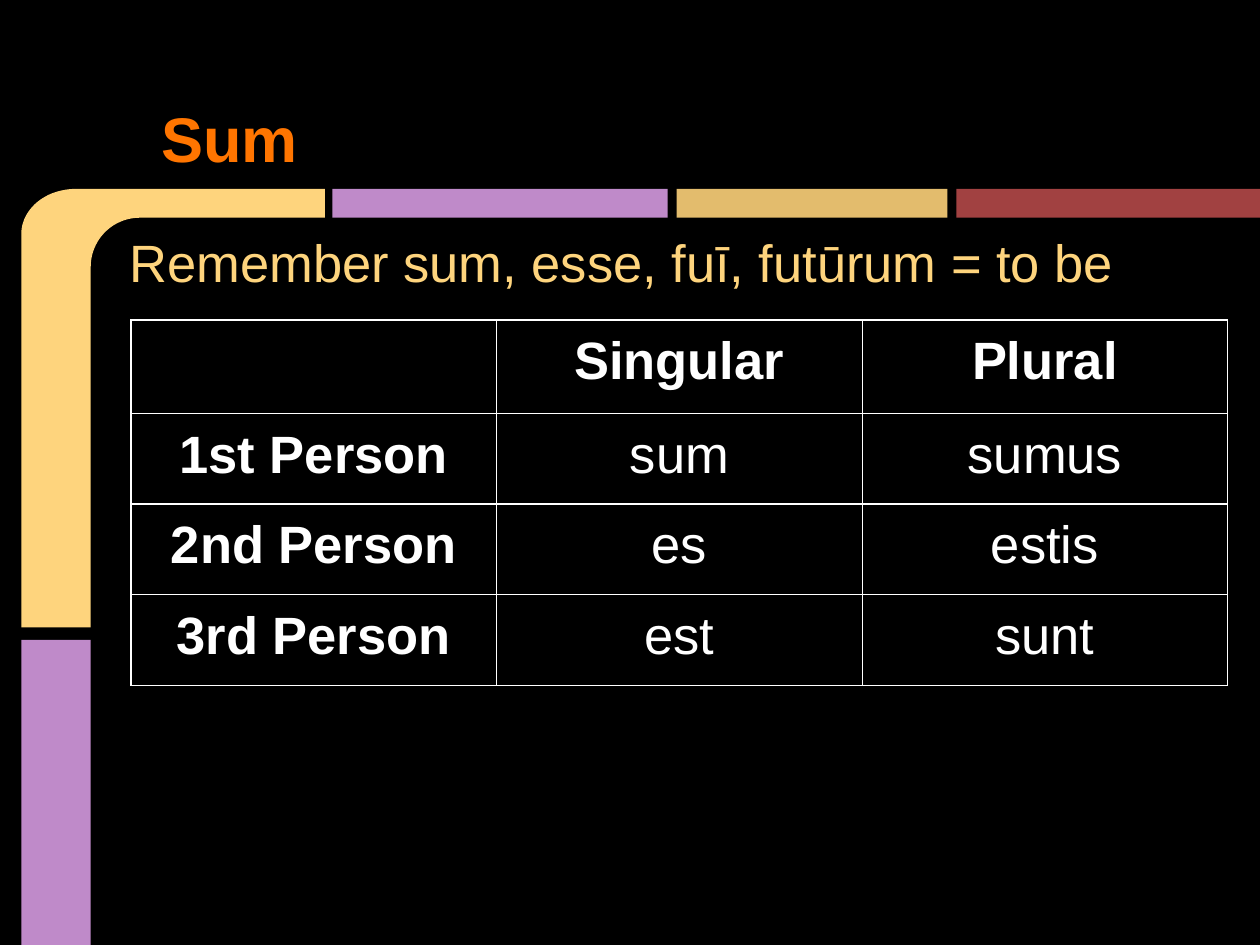
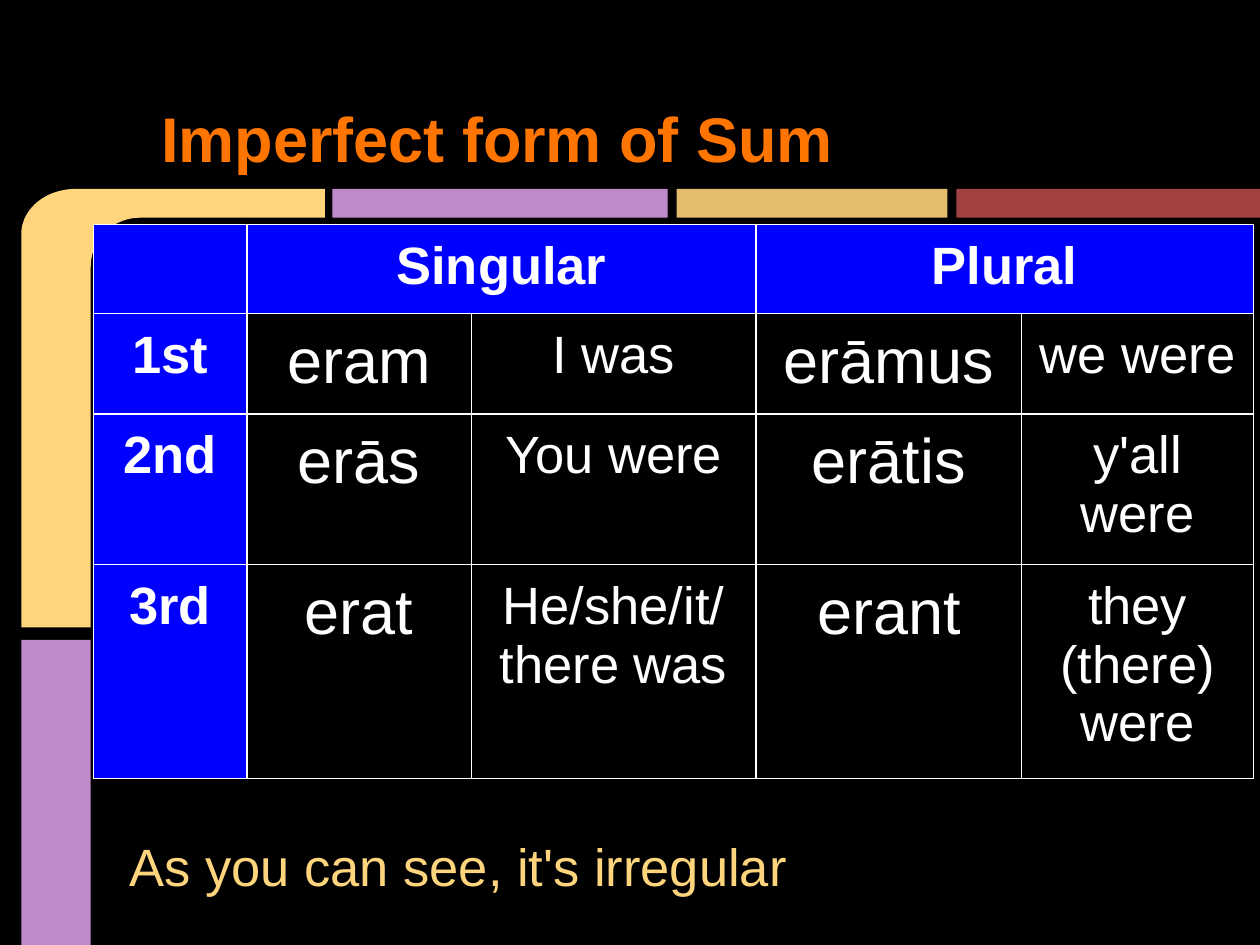
from dataclasses import dataclass
from math import cos, pi, sin

from lxml import etree
from pptx import Presentation
from pptx.dml.color import RGBColor
from pptx.enum.shapes import MSO_SHAPE
from pptx.enum.text import MSO_ANCHOR, PP_ALIGN
from pptx.oxml.ns import qn
from pptx.util import Cm, Pt

RECT = MSO_SHAPE.RECTANGLE
TOP, BOTTOM = MSO_ANCHOR.TOP, MSO_ANCHOR.BOTTOM
LEFT, CENTER = PP_ALIGN.LEFT, PP_ALIGN.CENTER
BLANK = 6


@dataclass(frozen=True)
class Theme:
    font: str = "Arial"
    back: str = "000000"
    title: str = "FF7500"
    gold: str = "FED47D"
    lilac: str = "BF8AC9"
    sand: str = "E3BC6D"
    brick: str = "A14141"
    head: str = "0000FF"
    white: str = "FFFFFF"
    large: int = 36
    base: int = 30
    rule: float = 0.75
    inset: float = 0.25


THEME = Theme()

BARS = [
    (0.43, 12.9, 1.4, 6.15, THEME.lilac),
    (6.7, 3.81, 6.76, 0.58, THEME.lilac),
    (13.64, 3.81, 5.46, 0.58, THEME.sand),
    (19.28, 3.81, 6.12, 0.58, THEME.brick),
]

PRESENT = [
    ["", "Singular", "Plural"],
    ["1st Person", "sum", "sumus"],
    ["2nd Person", "es", "estis"],
    ["3rd Person", "est", "sunt"],
]

PAST = [
    ["", "Singular", None, "Plural", None],
    ["1st", "eram", "I was", "erāmus", "we were"],
    ["2nd", "erās", "You were", "erātis", "y'all were"],
    ["3rd", "erat", "He/she/it/ there was", "erant", "they (there) were"],
]


def paint(shape, color):
    shape.fill.solid()
    shape.fill.fore_color.rgb = RGBColor.from_string(color)
    shape.line.fill.background()
    shape.shadow.inherit = False


def write(para, text, size, color, bold=False, align=LEFT):
    para.alignment = align
    run = para.add_run()
    run.text = text
    font = run.font
    font.name, font.size, font.bold = THEME.font, Pt(size), bold
    font.color.rgb = RGBColor.from_string(color)


def pad(item):
    item.margin_left = item.margin_right = Cm(THEME.inset)
    item.margin_top = item.margin_bottom = Cm(THEME.inset)


def arc(mid, radii, start, end, steps=24):
    for step in range(steps + 1):
        angle = start + (end - start) * step / steps
        yield (Cm(mid[0] + radii[0] * cos(angle)),
               Cm(mid[1] + radii[1] * sin(angle)))


def add_corner(slide):
    outer = arc((1.52, 4.72), (1.09, 0.91), pi, 1.5 * pi)
    inner = arc((2.82, 5.38), (0.99, 0.99), 1.5 * pi, pi)
    points = [(Cm(1.83), Cm(12.65)), (Cm(0.43), Cm(12.65)), *outer,
              (Cm(6.55), Cm(3.81)), (Cm(6.55), Cm(4.39)), *inner]
    form = slide.shapes.build_freeform(*points[0])
    form.add_line_segments(points[1:])
    paint(form.convert_to_shape(), THEME.gold)


def add_text(slide, top, height, text, size, color,
             bold=False, anchor=TOP, margin=0, indent=0, before=0):
    box = slide.shapes.add_textbox(Cm(2.36), Cm(top), Cm(21.74), Cm(height))
    frame = box.text_frame
    frame.word_wrap = True
    frame.vertical_anchor = anchor
    pad(frame)
    para = frame.paragraphs[0]
    para.space_before = Pt(before)
    props = para._p.get_or_add_pPr()
    props.set("marL", str(Cm(margin)))
    props.set("indent", str(Cm(indent)))
    write(para, text, size, color, bold)


def add_note(slide, top, height, text):
    add_text(slide, top, height, text, THEME.base, THEME.gold,
             margin=1.27, indent=-1.27, before=6)


def add_edges(cell):
    props = cell._tc.get_or_add_tcPr()
    for side in ("lnL", "lnR", "lnT", "lnB"):
        line = etree.SubElement(props, qn(f"a:{side}"), w=str(Pt(THEME.rule)))
        fill = etree.SubElement(line, qn("a:solidFill"))
        etree.SubElement(fill, qn("a:srgbClr"), val=THEME.white)


def add_grid(slide, left, top, rows, widths, heights, head=None, verb=THEME.base):
    shape = slide.shapes.add_table(len(rows), len(widths), Cm(left), Cm(top),
                                   Cm(sum(widths)), Cm(sum(heights)))
    table = shape.table
    table.first_row = table.horz_banding = False
    for col, width in zip(table.columns, widths):
        col.width = Cm(width)
    for row, height in zip(table.rows, heights):
        row.height = Cm(height)
    for y, row in enumerate(rows):
        for x, text in enumerate(row):
            cell = table.cell(y, x)
            label = y == 0 or x == 0
            pad(cell)
            add_edges(cell)
            if label and head:
                cell.fill.solid()
                cell.fill.fore_color.rgb = RGBColor.from_string(head)
            else:
                cell.fill.background()
            if text is None:
                table.cell(y, x - 1).merge(cell)
            elif text:
                size = verb if x % 2 and not label else THEME.base
                write(cell.text_frame.paragraphs[0], text, size,
                      THEME.white, label, CENTER)


def add_slide(deck, title):
    slide = deck.slides.add_slide(deck.slide_layouts[BLANK])
    fill = slide.background.fill
    fill.solid()
    fill.fore_color.rgb = RGBColor.from_string(THEME.back)
    add_corner(slide)
    for left, top, width, height, color in BARS:
        bar = slide.shapes.add_shape(RECT, Cm(left), Cm(top), Cm(width), Cm(height))
        paint(bar, color)
    add_text(slide, 0.61, 3.18, title, THEME.large, THEME.title,
             bold=True, anchor=BOTTOM, indent=0.64)
    return slide


def main():
    deck = Presentation()
    deck.slide_width, deck.slide_height = Cm(25.4), Cm(19.05)

    slide = add_slide(deck, "Sum")
    add_note(slide, 4.39, 2.36, "Remember sum, esse, fuī, futūrum = to be")
    add_grid(slide, 2.64, 6.45, PRESENT, [7.37] * 3, [1.88] + [1.83] * 3)

    slide = add_slide(deck, "Imperfect form of Sum")
    add_note(slide, 16.56, 1.85, "As you can see, it's irregular")
    add_grid(slide, 1.88, 4.52, PAST, [3.1, 4.52, 5.74, 5.36, 4.67],
             [1.8, 1.93, 2.87, 4.06], THEME.head, THEME.large)

    deck.save("out.pptx")


if __name__ == "__main__":
    main()
